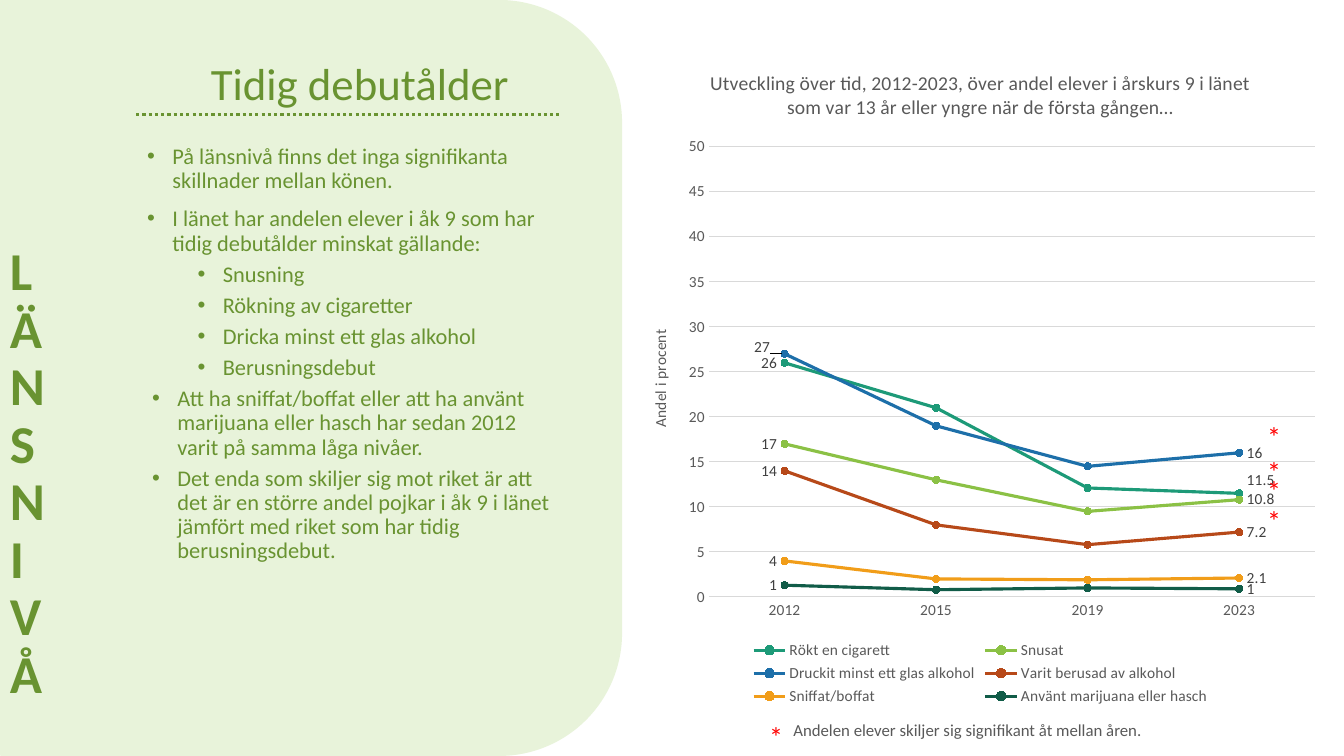
from lxml import etree
from pptx import Presentation
from pptx import util as u
from pptx.chart.data import CategoryChartData
from pptx.dml.color import RGBColor
from pptx.enum import chart as ch, dml, shapes, text
from pptx.oxml import parse_xml
from pptx.oxml.ns import nsdecls, qn

PX = 9144  # EMU per px, 100 px to the inch


class Theme:
    font = "Calibri"
    green, pale, grey = "699331", "E8F3DA", "595959"
    grid, label, red = "D9D9D9", "404040", "FF0000"
    side, title, star, body, head, note, chart = 38, 32, 20, 16, 14, 12, 11


YEARS = ["2012", "2015", "2019", "2023"]
SERIES = [
    ("Rökt en cigarett", (26, 21, 12.1, 11.5), "1D9A78"),
    ("Snusat", (17, 13, 9.5, 10.8), "8BC145"),
    ("Druckit minst ett glas alkohol", (27, 19, 14.5, 16), "1D6FA9"),
    ("Varit berusad av alkohol", (14, 8, 5.8, 7.2), "B74919"),
    ("Sniffat/boffat", (4, 2, 1.9, 2.1), "F19D19"),
    ("Använt marijuana eller hasch", (1.3, 0.8, 1, 0.9), "115C48"),
]
# (series, point): label shift as a share of the chart
SHIFTS = {(2, 0): (-0.01, -0.01), (0, 3): (0, -0.02)}

# text, level, left margin in px, space before in points
BULLETS = [
    ("På länsnivå finns det inga signifikanta skillnader mellan könen.", 0, 25, 10),
    ("I länet har andelen elever i åk 9 som har tidig debutålder minskat gällande:", 0, 25, 10),
    ("Snusning", 1, 75, 5),
    ("Rökning av cigaretter", 1, 75, 5),
    ("Dricka minst ett glas alkohol", 1, 75, 5),
    ("Berusningsdebut", 1, 75, 5),
    ("Att ha sniffat/boffat eller att ha använt marijuana eller hasch har sedan 2012 "
     "varit på samma låga nivåer.", 1, 30, 5),
    ("Det enda som skiljer sig mot riket är att det är en större andel pojkar i åk 9 i länet "
     "jämfört med riket som har tidig berusningsdebut.", 1, 30, 5),
]


def box(*px):
    return [v * PX for v in px]


def rgb(color):
    return RGBColor.from_string(color)


def style(font, size, color, bold=False):
    font.name, font.size, font.bold = Theme.font, u.Pt(size), bold
    font.color.rgb = rgb(color)


def write(p, words, size=Theme.body, color=Theme.green, bold=False, align=None, spacing=None):
    r = p.add_run()
    r.text = words
    style(r.font, size, color, bold)
    p.alignment = align
    if spacing:
        p.line_spacing = spacing


def place(sp, *px):
    sp.left, sp.top, sp.width, sp.height = box(*px)


def add_text(s, px, words, **fmt):
    tf = s.shapes.add_textbox(*box(*px)).text_frame
    tf.word_wrap = True
    write(tf.paragraphs[0], words, **fmt)
    return tf


def add_panel(s):
    sp = s.shapes.add_shape(shapes.MSO_SHAPE.ROUNDED_RECTANGLE, *box(-114, 0, 731, 750))
    sp.shadow.inherit = False
    sp.fill.solid()
    sp.fill.fore_color.rgb = rgb(Theme.pale)
    sp.line.fill.background()
    s.shapes.title._element.addprevious(sp._element)  # behind the placeholders


def add_rule(s):
    line = s.shapes.add_connector(shapes.MSO_CONNECTOR.STRAIGHT, *box(135, 114, 556, 114))
    line.line.color.rgb = rgb(Theme.green)
    line.line.width = u.Pt(2.25)
    line.line.dash_style = dml.MSO_LINE.ROUND_DOT
    etree.SubElement(line._element.spPr, qn("a:effectLst"))


def fill_bullets(sp):
    place(sp, 136, 139, 420, 520)
    sp.fill.solid()
    sp.fill.fore_color.rgb = rgb(Theme.pale)
    tf = sp.text_frame
    for i, (words, level, margin, before) in enumerate(BULLETS):
        p = tf.add_paragraph() if i else tf.paragraphs[0]
        write(p, words, spacing=0.9)
        p.level, p.space_before = level, u.Pt(before)
        pPr = p._p.get_or_add_pPr()
        pPr.set("marL", str(margin * PX))
        pPr.set("indent", str(-25 * PX))
        etree.SubElement(pPr, qn("a:buChar")).set("char", "•")


def layout(x, y, w=None, h=None, inner=False):
    parts = [("layoutTarget", "inner")] if inner else []
    if w:
        parts += [("xMode", "edge"), ("yMode", "edge")]
    parts += [(k, v) for k, v in zip("xywh", (x, y, w, h)) if v is not None]
    body = "".join(f'<c:{k} val="{v}"/>' for k, v in parts)
    return parse_xml(f'<c:layout {nsdecls("c")}><c:manualLayout>{body}</c:manualLayout></c:layout>')


def label_point(series, i, side, shift, fmt):
    label = series.points[i].data_label
    style(label.font, Theme.chart, Theme.label)
    label.position = side
    dLbl = label._dLbl
    if shift:
        dLbl.find(qn("c:idx")).addnext(layout(*shift))
    dLbl.find(qn("c:txPr")).addprevious(
        parse_xml(f'<c:numFmt {nsdecls("c")} formatCode="{fmt}" sourceLinked="0"/>'))


def format_series(chart):
    for n, (series, (_, _, color)) in enumerate(zip(chart.plots[0].series, SERIES)):
        series.smooth = False
        series.format.line.color.rgb = rgb(color)
        series.format.line.width = u.Pt(2.25)
        marker = series.marker
        marker.style, marker.size = ch.XL_MARKER_STYLE.CIRCLE, 5
        marker.format.fill.solid()
        marker.format.fill.fore_color.rgb = rgb(color)
        marker.format.line.color.rgb = rgb(color)
        fmt = "0" if n == len(SERIES) - 1 else "General"
        for i, side in ((0, ch.XL_LABEL_POSITION.LEFT), (3, ch.XL_LABEL_POSITION.RIGHT)):
            label_point(series, i, side, SHIFTS.get((n, i)), fmt)
        series.data_labels.show_value = False


def format_axes(chart):
    cat, val = chart.category_axis, chart.value_axis
    for axis in (cat, val):
        axis.major_tick_mark = axis.minor_tick_mark = ch.XL_TICK_MARK.NONE
        style(axis.tick_labels.font, Theme.chart, Theme.grey)
    val.minimum_scale, val.maximum_scale, val.major_unit = 0, 50, 5
    val.format.line.fill.background()
    for line in (cat.format.line, val.major_gridlines.format.line):
        line.color.rgb = rgb(Theme.grid)
        line.width = u.Pt(0.75)
    write(val.axis_title.text_frame.paragraphs[0], "Andel i procent",
          size=Theme.chart, color=Theme.grey)


def add_line_chart(s):
    data = CategoryChartData()
    data.categories = YEARS
    for name, values, _ in SERIES:
        data.add_series(name, values)
    chart = s.shapes.add_chart(ch.XL_CHART_TYPE.LINE_MARKERS, *box(627, 47, 691, 657), data).chart
    style(chart.font, Theme.chart, "000000")
    write(chart.chart_title.text_frame.paragraphs[0],
          "Utveckling över tid, 2012-2023, över andel elever i årskurs 9 i länet som "
          "var 13 år eller yngre när de första gången…", size=Theme.head, color=Theme.grey)
    chart.plots[0].vary_by_categories = False
    format_series(chart)
    format_axes(chart)
    chart.has_legend = True
    legend = chart.legend
    legend.position = ch.XL_LEGEND_POSITION.BOTTOM
    legend.include_in_layout = False
    style(legend.font, Theme.chart, Theme.grey)
    legend._element.find(qn("c:legendPos")).addnext(layout(0.16, 0.89, 0.67, 0.11))
    plot_area = chart._chartSpace.chart.plotArea
    for old in plot_area.findall(qn("c:layout")):
        plot_area.remove(old)
    plot_area.insert(0, layout(0.11, 0.15, 0.87, 0.68, inner=True))


def main():
    prs = Presentation()
    prs.slide_width, prs.slide_height = box(1333, 750)
    s = prs.slides.add_slide(prs.slide_layouts[1])

    # Left panel: title, rule, list and stacked side text
    add_panel(s)
    title = s.shapes.title
    place(title, 136, 16, 442, 98)
    title.text_frame.vertical_anchor = text.MSO_ANCHOR.BOTTOM
    write(title.text_frame.paragraphs[0], "Tidig debutålder", size=Theme.title,
          align=text.PP_ALIGN.CENTER, spacing=0.9)
    fill_bullets(s.placeholders[1])
    add_rule(s)
    tf = add_text(s, (0, 47, 105, 657), "LÄNSNIVÅ", size=Theme.side, bold=True, spacing=0.9)
    tf.vertical_anchor = text.MSO_ANCHOR.BOTTOM
    tf._txBody.bodyPr.set("vert", "wordArtVert")

    # Chart with significance marks and their key
    add_line_chart(s)
    for x, y in ((1247, 411), (1247, 446), (1247, 465), (1247, 495), (753, 709)):
        add_text(s, (x, y, 50, 69), "*", size=Theme.star, color=Theme.red)
    add_text(s, (777, 709, 471, 30), "Andelen elever skiljer sig signifikant åt mellan åren.",
             size=Theme.note, color=Theme.grey)

    prs.save("out.pptx")


if __name__ == "__main__":
    main()
